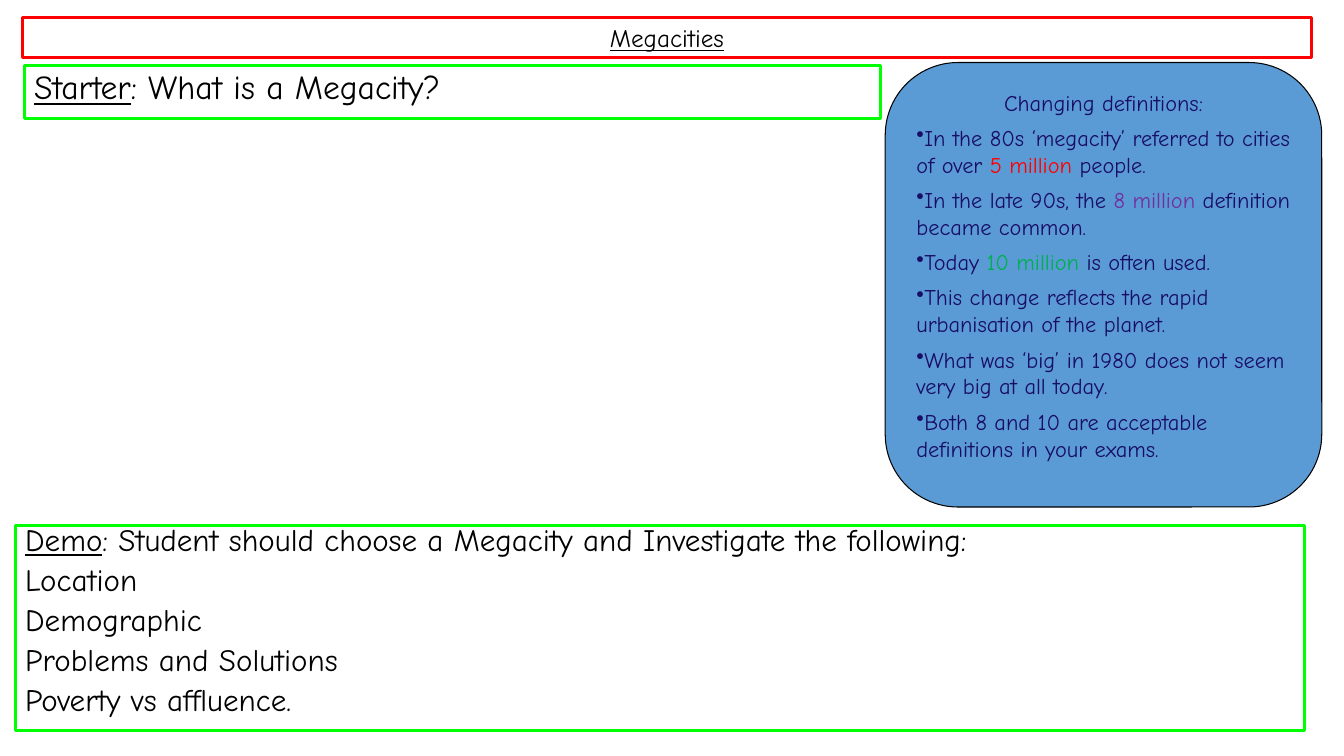
"""Build the Megacities lesson slide."""
from dataclasses import dataclass

from lxml.etree import SubElement
from pptx import Presentation
from pptx.dml.color import RGBColor
from pptx.enum.shapes import MSO_SHAPE
from pptx.enum.text import MSO_ANCHOR, MSO_AUTO_SIZE, PP_ALIGN
from pptx.oxml.ns import qn
from pptx.util import Inches, Pt


@dataclass(frozen=True)
class Theme:
    font: str = "Comic Neue"
    black: str = "000000"
    navy: str = "180E63"
    red: str = "FF0000"
    purple: str = "7030A0"
    green: str = "00B050"
    frame_green: str = "00FF00"
    panel_blue: str = "5B9BD5"
    title_size: float = 18
    starter_size: float = 24
    demo_size: float = 22.2
    panel_size: float = 16
    frame_width: float = 2.25
    panel_line_width: float = 0.75


THEME = Theme()


@dataclass(frozen=True)
class Run:
    text: str
    color: str = THEME.black
    underline: bool = False


@dataclass(frozen=True)
class Line:
    runs: tuple[Run, ...]
    bullet: bool = False
    centered: bool = False


@dataclass(frozen=True)
class Box:
    left: float
    top: float
    width: float
    height: float
    line_color: str
    line_width: float
    size: float
    spacing: dict
    lines: tuple[Line, ...]
    fill: str | None = None


def navy_line(*parts: str | Run, bullet: bool = True) -> Line:
    runs = tuple(part if isinstance(part, Run) else Run(part, THEME.navy) for part in parts)
    return Line(runs, bullet=bullet, centered=not bullet)


TITLE = Box(
    0.22, 0.17, 12.79, 0.4, THEME.red, THEME.frame_width, THEME.title_size, {},
    (Line((Run("Megacities", underline=True),), centered=True),),
)
STARTER = Box(
    0.24, 0.65, 8.49, 0.53, THEME.frame_green, THEME.frame_width, THEME.starter_size,
    {"line_spacing": 0.9, "space_before": Pt(10)},
    (Line((Run("Starter", underline=True), Run(": What is a Megacity?"))),),
)
DEMO_TOPICS = ("Location", "Demographic", "Problems and Solutions", "Poverty vs affluence.")
DEMO = Box(
    0.15, 5.21, 12.79, 2.04, THEME.frame_green, THEME.frame_width, THEME.demo_size,
    {"line_spacing": 0.7, "space_before": Pt(10)},
    (
        Line((
            Run("Demo", underline=True),
            Run(": Student should choose a Megacity and Investigate the following:"),
        )),
        *(Line((Run(topic),)) for topic in DEMO_TOPICS),
    ),
)
DEFINITIONS = Box(
    8.78, 0.62, 4.33, 4.41, THEME.black, THEME.panel_line_width, THEME.panel_size,
    {"space_after": Pt(6)},
    (
        navy_line("Changing definitions:", bullet=False),
        navy_line("In the 80s ‘megacity’ referred to cities of over ",
                  Run("5 million ", THEME.red), "people."),
        navy_line("In the late 90s, the ", Run("8 million", THEME.purple),
                  " definition became common."),
        navy_line("Today ", Run("10 million ", THEME.green), "is often used."),
        navy_line("This change reflects the rapid urbanisation of the planet."),
        navy_line("What was ‘big’ in 1980 does not seem very big at all today."),
        navy_line("Both 8 and 10 are acceptable definitions in your exams."),
    ),
    fill=THEME.panel_blue,
)


def apply_format(target, values: dict) -> None:
    for name, value in values.items():
        setattr(target, name, value)


def place(box: Box) -> dict:
    return {name: Inches(getattr(box, name)) for name in ("left", "top", "width", "height")}


def add_bullet(paragraph) -> None:
    properties = paragraph._p.get_or_add_pPr()
    properties.set("marL", "0")
    properties.set("indent", "0")
    SubElement(properties, qn("a:buChar")).set("char", "•")


def write_lines(text_frame, box: Box) -> None:
    apply_format(text_frame, {
        "word_wrap": True,
        "auto_size": MSO_AUTO_SIZE.NONE,
        "vertical_anchor": MSO_ANCHOR.TOP,
    })
    for index, line in enumerate(box.lines):
        paragraph = text_frame.add_paragraph() if index else text_frame.paragraphs[0]
        alignment = PP_ALIGN.CENTER if line.centered else PP_ALIGN.LEFT
        apply_format(paragraph, {"alignment": alignment, **box.spacing})
        if line.bullet:
            add_bullet(paragraph)
        for part in line.runs:
            run = paragraph.add_run()
            run.text = part.text
            apply_format(run.font, {
                "name": THEME.font, "size": Pt(box.size), "underline": part.underline,
            })
            run.font.color.rgb = RGBColor.from_string(part.color)


def format_box(shape, box: Box) -> None:
    apply_format(shape, place(box))
    if box.fill:
        shape.fill.solid()
        shape.fill.fore_color.rgb = RGBColor.from_string(box.fill)
    else:
        shape.fill.background()
    shape.line.color.rgb = RGBColor.from_string(box.line_color)
    shape.line.width = Pt(box.line_width)
    write_lines(shape.text_frame, box)


def main() -> None:
    presentation = Presentation()
    apply_format(presentation, {"slide_width": Inches(13.33), "slide_height": Inches(7.5)})
    slide = presentation.slides.add_slide(presentation.slide_layouts[0])

    format_box(slide.shapes.title, TITLE)
    format_box(slide.placeholders[1], DEMO)

    panel = slide.shapes.add_shape(MSO_SHAPE.ROUNDED_RECTANGLE, **place(DEFINITIONS))
    panel.shadow.inherit = False
    format_box(panel, DEFINITIONS)

    format_box(slide.shapes.add_textbox(**place(STARTER)), STARTER)
    presentation.save("out.pptx")


if __name__ == "__main__":
    main()
